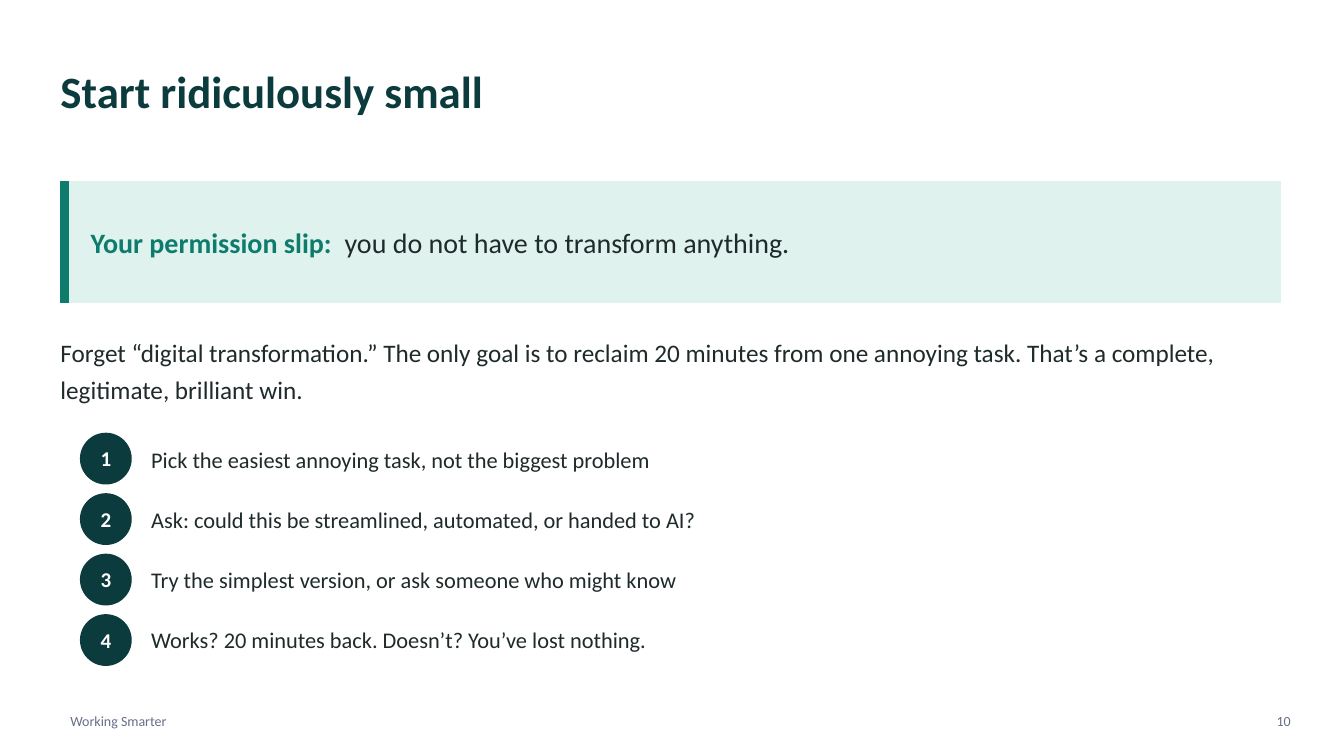
from lxml import etree
from pptx import Presentation, util as u
from pptx.dml.color import RGBColor
from pptx.enum import shapes, text
from pptx.oxml.ns import qn

# Palette
PINE = RGBColor(0x0B, 0x3B, 0x3C)
TEAL = RGBColor(0x0E, 0x7C, 0x6C)
MINT = RGBColor(0xE0, 0xF2, 0xEE)
INK = RGBColor(0x1F, 0x2A, 0x2A)
GREY = RGBColor(0x66, 0x70, 0x85)
WHITE = RGBColor(0xFF, 0xFF, 0xFF)

# Grid: square cells of a tenth of an inch
CELL = u.Inches(0.1)
LEFT, WIDTH = 6, 121
STEP_TOP, STEP_PITCH, BADGE = 43, 6, 5
STEP_SIZE, LINE_HEIGHT = 16, 1.22

TITLE = dict(size=u.Pt(32), bold=True, color=PINE)
LEAD = dict(size=u.Pt(20), bold=True, color=TEAL)
CALLOUT = dict(size=u.Pt(20), bold=False, color=INK)
BODY = dict(size=u.Pt(18), bold=False, color=INK)
STEP = dict(size=u.Pt(STEP_SIZE), bold=False, color=INK)
NUMBER = dict(size=u.Pt(15), bold=True, color=WHITE)
FOOTER = dict(size=u.Pt(10), bold=False, color=GREY)

STEPS = [
    "Pick the easiest annoying task, not the biggest problem",
    "Ask: could this be streamlined, automated, or handed to AI?",
    "Try the simplest version, or ask someone who might know",
    "Works? 20 minutes back. Doesn’t? You’ve lost nothing.",
]


def cells(*counts):
    return [round(n * CELL) for n in counts]


def place(sp, left, top, width, height):
    sp.left, sp.top, sp.width, sp.height = cells(left, top, width, height)


def set_frame(tf, inset=True):
    """Middle-anchored, wrapping frame, without insets unless asked."""
    tf.word_wrap = True
    tf.auto_size = text.MSO_AUTO_SIZE.NONE
    tf.vertical_anchor = text.MSO_ANCHOR.MIDDLE
    if not inset:
        for side in ("left", "top", "right", "bottom"):
            setattr(tf, f"margin_{side}", 0)


def add_run(p, words, style):
    r = p.add_run()
    r.text = words
    r.font.name = "Calibri"
    for name, value in style.items():
        if name == "color":
            r.font.color.rgb = value
        else:
            setattr(r.font, name, value)
    return r


def add_text(s, box, runs, inset=False, align=text.PP_ALIGN.LEFT):
    tf = s.shapes.add_textbox(*cells(*box)).text_frame
    set_frame(tf, inset)
    p = tf.paragraphs[0]
    p.alignment = align
    for words, style in runs:
        add_run(p, words, style)
    return p


def add_block(s, kind, box, color):
    sp = s.shapes.add_shape(kind, *cells(*box))
    sp.shadow.inherit = False
    sp.fill.solid()
    sp.fill.fore_color.rgb = color
    sp.line.color.rgb = color
    sp.line.width = u.Pt(1)
    return sp


def add_title(s, words):
    sp = s.shapes.title
    place(sp, LEFT, 4.5, WIDTH, 9)
    set_frame(sp.text_frame, inset=False)
    p = sp.text_frame.paragraphs[0]
    p.alignment = text.PP_ALIGN.LEFT
    add_run(p, words, TITLE)


def add_callout(s, lead, words):
    top, height = 18, 12
    rect = shapes.MSO_SHAPE.RECTANGLE
    add_block(s, rect, (LEFT, top, WIDTH, height), MINT)
    add_block(s, rect, (LEFT, top, 0.8, height), TEAL)
    p = add_text(s, (LEFT + 3, top, WIDTH - 4, height),
                 [(lead, LEAD), (" ", LEAD), (words, CALLOUT)])
    # Widen the gap after the lead by tracking its space
    p.runs[1]._r.get_or_add_rPr().set("spc", "450")


def add_steps(s, steps):
    # Numbered badges
    for i in range(len(steps)):
        sp = add_block(s, shapes.MSO_SHAPE.OVAL,
                       (LEFT + 2, STEP_TOP + i * STEP_PITCH, BADGE, BADGE), PINE)
        set_frame(sp.text_frame, inset=False)
        p = sp.text_frame.paragraphs[0]
        p.alignment = text.PP_ALIGN.CENTER
        add_run(p, str(i + 1), NUMBER)

    # Step list, one line per badge
    sp = s.placeholders[1]
    place(sp, 15, STEP_TOP, 110, (len(steps) - 1) * STEP_PITCH + BADGE)
    tf = sp.text_frame
    set_frame(tf, inset=False)
    gap = u.Pt(u.Length(STEP_PITCH * CELL).pt - STEP_SIZE * LINE_HEIGHT)
    for i, step in enumerate(steps):
        p = tf.add_paragraph() if i else tf.paragraphs[0]
        pPr = p._p.get_or_add_pPr()
        pPr.set("marL", "0")
        pPr.set("indent", "0")
        etree.SubElement(pPr, qn("a:buNone"))
        p.space_before = gap if i else 0
        p.space_after = 0
        add_run(p, step, STEP)


def main():
    prs = Presentation()
    prs.slide_width, prs.slide_height = u.Inches(13.33), u.Inches(7.5)
    s = prs.slides.add_slide(prs.slide_layouts[1])
    s.background.fill.solid()
    s.background.fill.fore_color.rgb = WHITE

    add_title(s, "Start ridiculously small")
    add_callout(s, "Your permission slip:", "you do not have to transform anything.")

    # Introduction
    p = add_text(s, (LEFT, 32, WIDTH, 9), [(
        "Forget “digital transformation.” The only goal is to reclaim 20 minutes "
        "from one annoying task. That’s a complete, legitimate, brilliant win.", BODY)])
    p.line_spacing = 1.2

    add_steps(s, STEPS)

    # Footer
    add_text(s, (LEFT, 70, 40, 3), [("Working Smarter", FOOTER)], inset=True)
    add_text(s, (124, 70, 5, 3), [("10", FOOTER)], inset=True,
             align=text.PP_ALIGN.RIGHT)

    prs.save("out.pptx")


if __name__ == "__main__":
    main()
